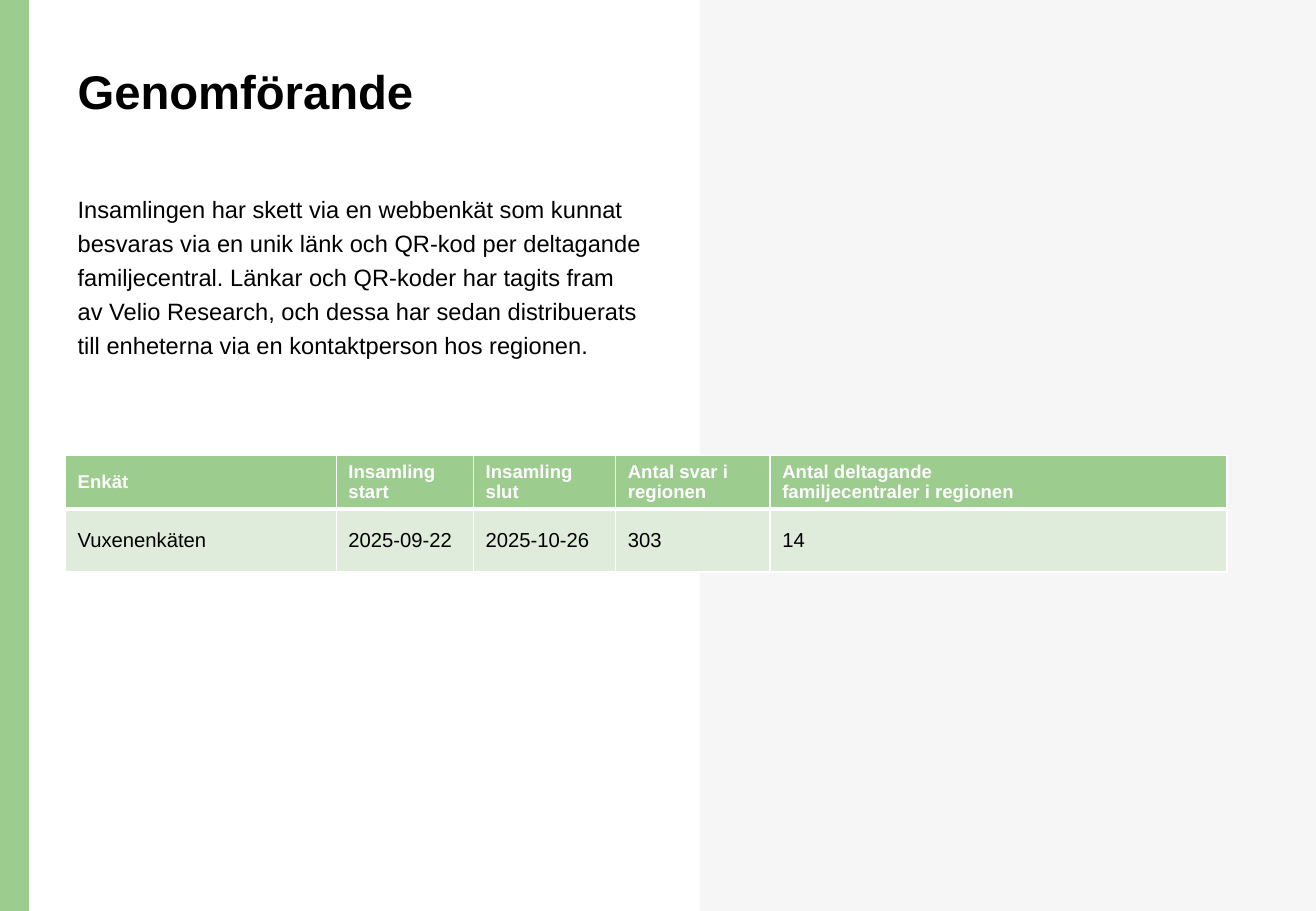
from typing import Any, NamedTuple

from lxml.etree import SubElement
from pptx import Presentation
from pptx.dml.color import RGBColor as RGB
from pptx.enum.shapes import MSO_SHAPE as Shape
from pptx.enum.text import MSO_ANCHOR as Anchor, MSO_AUTO_SIZE as AutoSize, PP_ALIGN as Align
from pptx.oxml import parse_xml
from pptx.oxml.ns import nsdecls, qn
from pptx.util import Cm, Pt

COLORS = {
    "green": "9DCC8F",
    "pale_green": "DFECDB",
    "grey": "F6F6F6",
    "white": "FFFFFF",
    "black": "000000",
}


class Box(NamedTuple):
    left: float
    top: float
    width: float
    height: float

    def lengths(self) -> list:
        return [Cm(v) for v in self]


class Panel(NamedTuple):
    box: Box
    color: str


class TextStyle(NamedTuple):
    size: float
    color: str
    bold: bool = False
    spacing: float = 1.0
    before: float = 0


class RowStyle(NamedTuple):
    height: float
    fill: str
    text: TextStyle
    top_line: float
    bottom_line: float


PANELS = [
    Panel(Box(14.63, 0, 12.88, 19.05), "grey"),
    Panel(Box(0, 0, 0.61, 19.05), "green"),
]
TITLE_BOX = Box(1.37, 1.3, 24.66, 2.51)
BODY_BOX = Box(1.37, 3.84, 12.4, 13.41)
TABLE_BOX = Box(1.37, 9.52, 24.28, 2.51)

TITLE_STYLE = TextStyle(28, "black", True, 0.9)
BODY_STYLE = TextStyle(14, "black", False, 1.2, 10)
ROW_STYLES = [
    RowStyle(1.0, "green", TextStyle(11, "white", True), 1, 3),
    RowStyle(1.32, "pale_green", TextStyle(12, "black"), 3, 1),
]
COLUMN_WIDTHS = [5.66, 2.87, 2.97, 3.23, 9.55]

BODY_TEXT = (
    "Insamlingen har skett via en webbenkät som kunnat besvaras via en unik länk "
    "och QR-kod per deltagande familjecentral. Länkar och QR-koder har tagits fram "
    "av Velio Research, och dessa har sedan distribuerats till enheterna via en "
    "kontaktperson hos regionen."
)
ROWS = [
    ["Enkät", "Insamling start", "Insamling slut", "Antal svar i regionen",
     "Antal deltagande\nfamiljecentraler i regionen"],
    ["Vuxenenkäten", "2025-09-22", "2025-10-26", "303", "14"],
]


def rgb(name: str) -> RGB:
    return RGB.from_string(COLORS[name])


def set_attrs(target: Any, values: dict[str, Any]) -> None:
    for name, value in values.items():
        setattr(target, name, value)


def write_text(tf: Any, text: str, style: TextStyle) -> None:
    tf.text = text
    for p in tf.paragraphs:
        set_attrs(p, {"alignment": Align.LEFT, "line_spacing": style.spacing,
                      "space_before": Pt(style.before)})
        for r in p.runs:
            set_attrs(r.font, {"name": "Arial", "size": Pt(style.size), "bold": style.bold})
            r.font.color.rgb = rgb(style.color)


def add_panel(slide: Any, panel: Panel, depth: int) -> None:
    """Draw a plain rectangle behind the placeholders."""
    sp = slide.shapes.add_shape(Shape.RECTANGLE, *panel.box.lengths())
    sp.shadow.inherit = False
    sp.fill.solid()
    sp.fill.fore_color.rgb = rgb(panel.color)
    sp.line.fill.background()
    sp.element.getparent().insert(2 + depth, sp.element)


def fill_placeholder(sp: Any, box: Box, text: str, style: TextStyle) -> None:
    set_attrs(sp, dict(zip(("left", "top", "width", "height"), box.lengths())))
    set_attrs(sp.text_frame, {"word_wrap": True, "auto_size": AutoSize.NONE,
                              "vertical_anchor": Anchor.TOP})
    write_text(sp.text_frame, text, style)


def remove_bullets(tf: Any) -> None:
    for p in tf.paragraphs:
        props = p._p.get_or_add_pPr()
        props.set("marL", "0")
        props.set("indent", "0")
        SubElement(props, qn("a:buNone"))


def add_borders(cell: Any, style: RowStyle) -> None:
    """Put white cell lines ahead of the fill, as the schema demands."""
    widths = {"lnL": 1, "lnR": 1, "lnT": style.top_line, "lnB": style.bottom_line}
    for i, (side, width) in enumerate(widths.items()):
        line = parse_xml(
            f'<a:{side} {nsdecls("a")} w="{Pt(width)}"><a:solidFill>'
            f'<a:srgbClr val="{COLORS["white"]}"/></a:solidFill></a:{side}>'
        )
        cell._tc.get_or_add_tcPr().insert(i, line)


def add_survey_table(slide: Any) -> None:
    frame = slide.shapes.add_table(len(ROWS), len(COLUMN_WIDTHS), *TABLE_BOX.lengths())
    table = frame.table
    table.horz_banding = False
    for column, width in zip(table.columns, COLUMN_WIDTHS):
        column.width = Cm(width)
    for row, texts, style in zip(table.rows, ROWS, ROW_STYLES):
        row.height = Cm(style.height)
        for cell, text in zip(row.cells, texts):
            cell.vertical_anchor = Anchor.MIDDLE
            cell.fill.solid()
            cell.fill.fore_color.rgb = rgb(style.fill)
            add_borders(cell, style)
            write_text(cell.text_frame, text, style.text)


def main() -> None:
    prs = Presentation()
    set_attrs(prs, {"slide_width": Cm(27.51), "slide_height": Cm(19.05)})
    slide = prs.slides.add_slide(prs.slide_layouts[1])
    for depth, panel in enumerate(PANELS):
        add_panel(slide, panel, depth)
    body = slide.placeholders[1]
    fill_placeholder(slide.shapes.title, TITLE_BOX, "Genomförande", TITLE_STYLE)
    fill_placeholder(body, BODY_BOX, BODY_TEXT, BODY_STYLE)
    remove_bullets(body.text_frame)
    add_survey_table(slide)
    prs.save("out.pptx")


if __name__ == "__main__":
    main()
